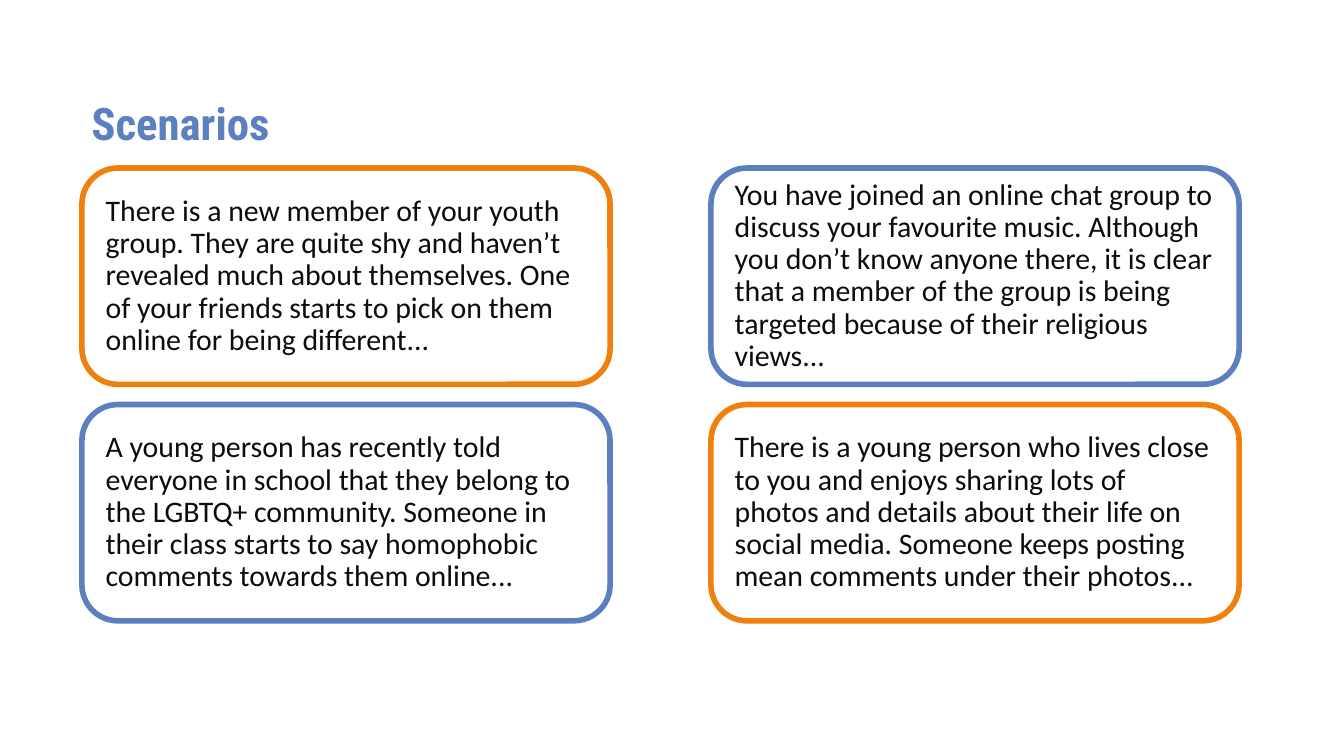
from dataclasses import dataclass

import pptx
import pptx.dml.color
import pptx.enum.shapes
import pptx.enum.text
import pptx.util

Inches = pptx.util.Inches


@dataclass(frozen=True)
class Theme:
    blue: str = "5B7FBF"
    orange: str = "F0800E"
    ink: str = "0C0C0C"
    title_font: str = "Roboto Condensed"
    body_font: str = "Calibri"
    title_size: int = 24
    body_size: int = 16
    border: int = 3
    spacing: float = 0.9


THEME = Theme()
SLIDE_WIDTH = 10
SLIDE_HEIGHT = SLIDE_WIDTH * 9 / 16
GRID_LEFT, GRID_TOP = 0.61, 1.25
COLUMN_STEP, ROW_STEP = 4.68, 1.76
CARD_WIDTH, CARD_HEIGHT = 3.93, 1.61

SCENARIOS = [
    [
        "There is a new member of your youth group. They are quite shy and "
        "haven’t revealed much about themselves. One of your friends starts "
        "to pick on them online for being different...",
        "You have joined an online chat group to discuss your favourite music. "
        "Although you don’t know anyone there, it is clear that a member of "
        "the group is being targeted because of their religious views...",
    ],
    [
        "A young person has recently told everyone in school that they belong "
        "to the LGBTQ+ community. Someone in their class starts to say "
        "homophobic comments towards them online...",
        "There is a young person who lives close to you and enjoys sharing "
        "lots of photos and details about their life on social media. Someone "
        "keeps posting mean comments under their photos...",
    ],
]


def rgb(value):
    return pptx.dml.color.RGBColor.from_string(value)


def set_values(target, values):
    for name, value in values.items():
        setattr(target, name, value)


def write_text(shape, wording, color, inset_x, inset_y, font_values):
    """Fill a shape with one left-aligned, vertically centred paragraph."""
    frame = shape.text_frame
    set_values(frame, {
        "word_wrap": True,
        "vertical_anchor": pptx.enum.text.MSO_ANCHOR.MIDDLE,
        "margin_left": Inches(inset_x),
        "margin_right": Inches(inset_x),
        "margin_top": Inches(inset_y),
        "margin_bottom": Inches(inset_y),
    })
    paragraph = frame.paragraphs[0]
    set_values(paragraph, {
        "alignment": pptx.enum.text.PP_ALIGN.LEFT,
        "line_spacing": THEME.spacing,
    })
    run = paragraph.add_run()
    run.text = wording
    set_values(run.font, font_values)
    run.font.color.rgb = rgb(color)


def add_title(slide, wording):
    title = slide.shapes.add_textbox(
        Inches(GRID_LEFT), Inches(0.37), Inches(3.3), Inches(1.13))
    write_text(title, wording, THEME.blue, 0.07, 0.04, {
        "name": THEME.title_font,
        "size": pptx.util.Pt(THEME.title_size),
        "bold": True,
    })


def add_scenario(slide, column, row, wording):
    """Place a card in the grid; border colours form a checkerboard."""
    card = slide.shapes.add_shape(
        pptx.enum.shapes.MSO_SHAPE.ROUNDED_RECTANGLE,
        Inches(GRID_LEFT + column * COLUMN_STEP),
        Inches(GRID_TOP + row * ROW_STEP),
        Inches(CARD_WIDTH), Inches(CARD_HEIGHT))
    card.shadow.inherit = False
    card.adjustments[0] = 1 / 6
    card.fill.background()
    card.line.color.rgb = rgb((THEME.orange, THEME.blue)[(column + row) % 2])
    card.line.width = pptx.util.Pt(THEME.border)
    write_text(card, wording, THEME.ink, 0.1, 0.1, {
        "name": THEME.body_font,
        "size": pptx.util.Pt(THEME.body_size),
    })


def main():
    deck = pptx.Presentation()
    deck.slide_width = Inches(SLIDE_WIDTH)
    deck.slide_height = Inches(SLIDE_HEIGHT)
    slide = deck.slides.add_slide(deck.slide_layouts[6])
    add_title(slide, "Scenarios")
    for row, scenarios in enumerate(SCENARIOS):
        for column, wording in enumerate(scenarios):
            add_scenario(slide, column, row, wording)
    deck.save("out.pptx")


if __name__ == "__main__":
    main()
